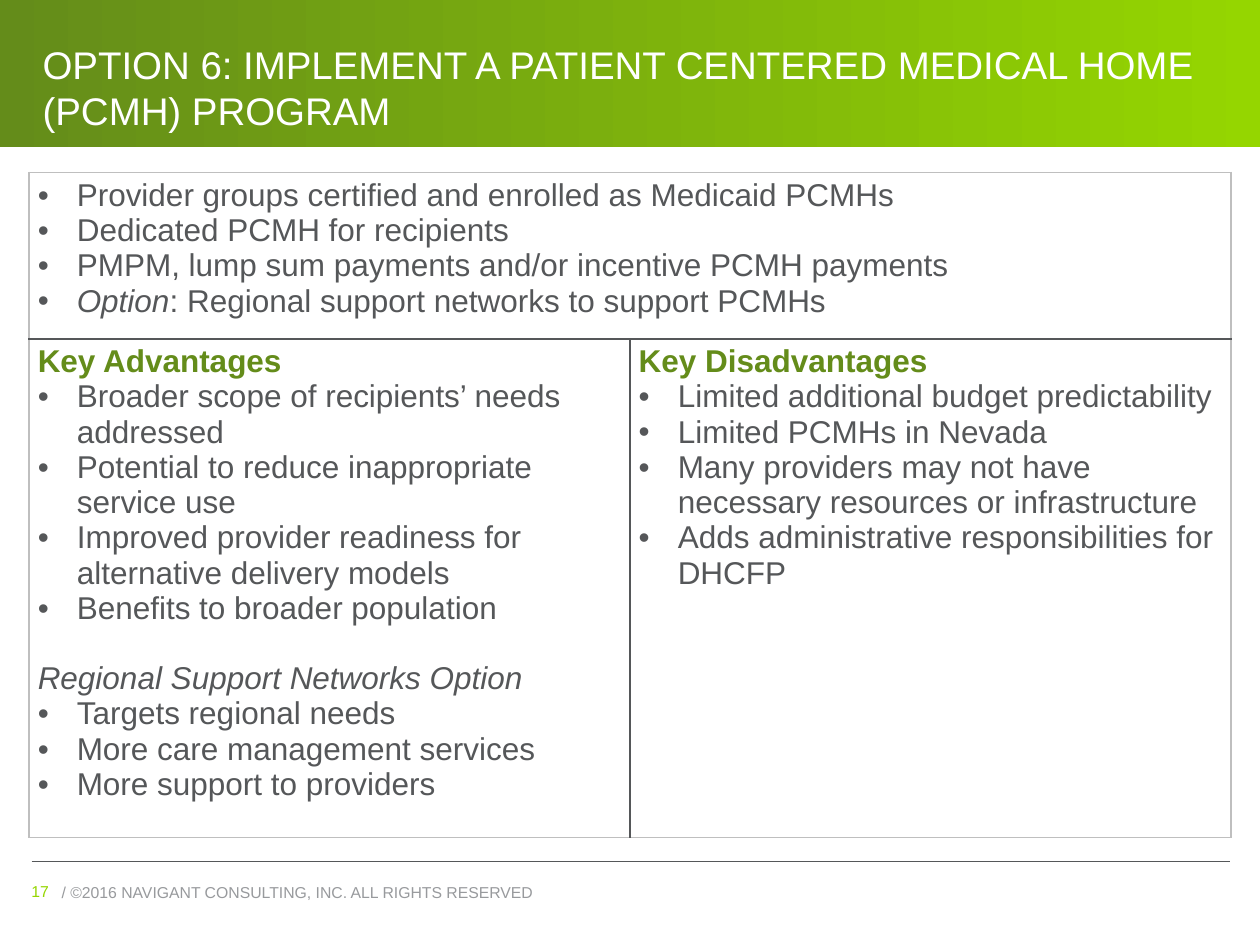
from lxml import etree
from pptx import Presentation
from pptx.dml import color
from pptx.enum import shapes, text
from pptx.oxml import ns
from pptx.util import Inches, Pt

GREY, GREEN, LIME = "555759", "648C1A", "95D600"
PALE = "BFBFBF"

SUMMARY = [
    ("bullet", "Provider groups certified and enrolled as Medicaid PCMHs"),
    ("bullet", "Dedicated PCMH for recipients"),
    ("bullet", "PMPM, lump sum payments and/or incentive PCMH payments"),
    ("option", "Option: Regional support networks to support PCMHs"),
]
ADVANTAGES = [
    ("heading", "Key Advantages"),
    ("bullet", "Broader scope of recipients’ needs addressed"),
    ("bullet", "Potential to reduce inappropriate service use"),
    ("bullet", "Improved provider readiness for alternative delivery models"),
    ("bullet", "Benefits to broader population"),
    ("subheading", "Regional Support Networks Option"),
    ("bullet", "Targets regional needs"),
    ("bullet", "More care management services"),
    ("bullet", "More support to providers"),
]
DISADVANTAGES = [
    ("heading", "Key Disadvantages"),
    ("bullet", "Limited additional budget predictability"),
    ("bullet", "Limited PCMHs in Nevada"),
    ("bullet", "Many providers may not have necessary resources or infrastructure"),
    ("bullet", "Adds administrative responsibilities for DHCFP"),
]


def rgb(value):
    """Turn a hex string into a colour."""
    return color.RGBColor.from_string(value)


def style(run, size, ink):
    """Set the font, size and colour of a run."""
    run.font.name, run.font.size = "Arial", Pt(size)
    run.font.color.rgb = rgb(ink)


def add_banner(slide):
    """Draw the gradient band behind the title."""
    banner = slide.shapes.add_shape(
        shapes.MSO_SHAPE.RECTANGLE, 0, 0, Inches(10), Inches(1.17))
    banner.shadow.inherit = False
    banner.line.fill.background()
    banner.fill.gradient()
    banner.fill.gradient_angle = 0
    for stop, shade in zip(banner.fill.gradient_stops, (GREEN, LIME)):
        stop.color.rgb = rgb(shade)


def add_footer_rule(slide):
    """Draw the thin line above the footer."""
    rule = slide.shapes.add_connector(
        shapes.MSO_CONNECTOR.STRAIGHT,
        Inches(0.25), Inches(6.84), Inches(9.76), Inches(6.84))
    rule.line.color.rgb = rgb(GREY)
    rule.line.width = Pt(0.75)
    etree.SubElement(rule._element.spPr, ns.qn("a:effectLst"))


def add_label(slide, box, words, size, ink, anchor):
    """Place one line or block of plain text."""
    label = slide.shapes.add_textbox(*map(Inches, box))
    frame = label.text_frame
    frame.word_wrap = True
    frame.vertical_anchor = anchor
    frame.text = words
    style(frame.paragraphs[0].runs[0], size, ink)


def add_bullet(paragraph):
    """Give a paragraph a hanging bullet."""
    properties = paragraph._p.get_or_add_pPr()
    properties.set("marL", str(Inches(0.31)))
    properties.set("indent", str(-Inches(0.31)))
    etree.SubElement(properties, ns.qn("a:buFont"), typeface="Arial")
    etree.SubElement(properties, ns.qn("a:buChar"), char="•")


def set_borders(cell, sides):
    """Draw the cell borders, given a colour for each side."""
    properties = cell._tc.get_or_add_tcPr()
    for side in "LRTB":
        edge = etree.SubElement(properties, ns.qn(f"a:ln{side}"), w=str(Pt(1)))
        fill = etree.SubElement(edge, ns.qn("a:solidFill"))
        etree.SubElement(fill, ns.qn("a:srgbClr"), val=sides[side])


def fill_cell(cell, entries):
    """Write headings and bullets into a cell."""
    cell.margin_left = cell.margin_right = Inches(0.07)
    cell.margin_top = cell.margin_bottom = Inches(0.04)
    frame = cell.text_frame
    frame.text = "\n".join(words for _, words in entries)
    for paragraph, (role, words) in zip(frame.paragraphs, entries):
        if role in ("bullet", "option"):
            add_bullet(paragraph)
        if role == "option":
            lead, colon, rest = words.partition(":")
            paragraph.runs[0].text = lead
            paragraph.add_run().text = colon + rest
        if role == "subheading":
            paragraph.space_before = Pt(20)
        for run in paragraph.runs:
            style(run, 18, GREEN if role == "heading" else GREY)
        paragraph.runs[0].font.bold = role == "heading"
        paragraph.runs[0].font.italic = role in ("option", "subheading")


def add_comparison(slide):
    """Build the table of summary, advantages and disadvantages."""
    table = slide.shapes.add_table(
        2, 2, Inches(0.23), Inches(1.37), Inches(9.54), Inches(5.03)).table
    table.first_row = table.horz_banding = False
    for row, height in zip(table.rows, (1.32, 3.71)):
        row.height = Inches(height)
    for row in range(2):
        for column in range(2):
            cell = table.cell(row, column)
            set_borders(cell, {
                "L": GREY if column else PALE,
                "R": PALE if column else GREY,
                "T": GREY if row else PALE,
                "B": PALE if row else GREY,
            })
            cell.fill.background()
    summary = table.cell(0, 0)
    summary.merge(table.cell(0, 1))
    summary._tc.tcPr.find(
        f"{ns.qn('a:lnR')}/{ns.qn('a:solidFill')}/{ns.qn('a:srgbClr')}"
    ).set("val", PALE)
    fill_cell(summary, SUMMARY)
    fill_cell(table.cell(1, 0), ADVANTAGES)
    fill_cell(table.cell(1, 1), DISADVANTAGES)


def main():
    """Build and save the slide."""
    deck = Presentation()
    deck.slide_width, deck.slide_height = Inches(10), Inches(7.5)
    slide = deck.slides.add_slide(deck.slide_layouts[6])
    anchors = text.MSO_ANCHOR
    add_footer_rule(slide)
    add_banner(slide)
    add_label(slide, (0.39, 6.97, 6.37, 0.22),
              "/ ©2016 NAVIGANT CONSULTING, INC. ALL RIGHTS RESERVED",
              9, "989A9D", anchors.MIDDLE)
    add_label(slide, (0.15, 6.96, 0.68, 0.23), "17", 9, LIME, anchors.MIDDLE)
    add_label(slide, (0.24, 0, 9.53, 1.11),
              "OPTION 6: IMPLEMENT A PATIENT CENTERED MEDICAL HOME (PCMH) PROGRAM",
              22, "FFFFFF", anchors.BOTTOM)
    add_comparison(slide)
    deck.save("out.pptx")


if __name__ == "__main__":
    main()
